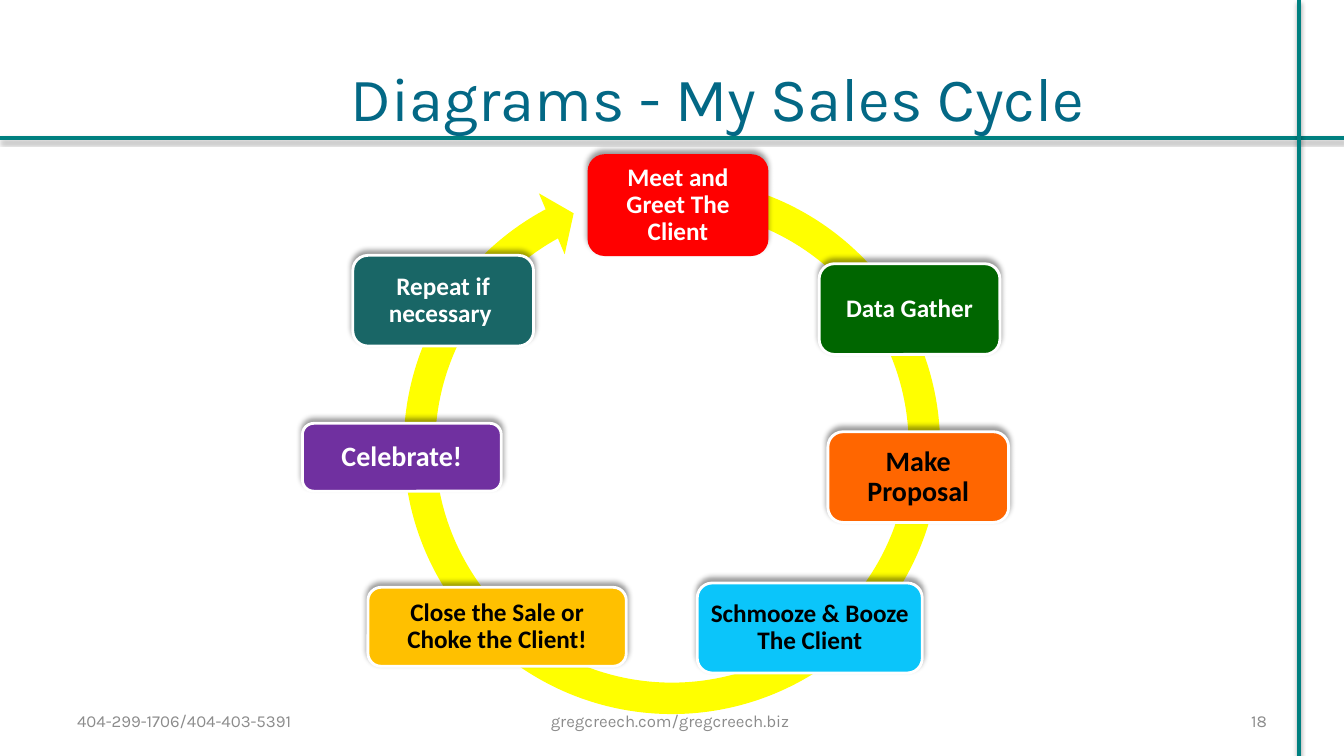
import pptx
import pptx.util
import pptx.dml.color
import pptx.enum.shapes
import pptx.enum.text
import pptx.oxml
import pptx.oxml.ns

RGB = pptx.dml.color.RGBColor
Pt = pptx.util.Pt
SHAPE = pptx.enum.shapes.MSO_SHAPE
ALIGN = pptx.enum.text.PP_ALIGN

WHITE = RGB(0xFF, 0xFF, 0xFF)
BLACK = RGB(0x00, 0x00, 0x00)
TEAL = RGB(0x00, 0x80, 0x80)
TITLE_BLUE = RGB(0x03, 0x68, 0x85)
FOOTER_GREY = RGB(0x8C, 0x8C, 0x8C)
YELLOW = RGB(0xFF, 0xFF, 0x00)
RED = RGB(0xFF, 0x00, 0x00)
GREEN = RGB(0x00, 0x66, 0x00)
ORANGE = RGB(0xFF, 0x66, 0x00)
SKY = RGB(0x0B, 0xC5, 0xFA)
AMBER = RGB(0xFF, 0xC0, 0x00)
PURPLE = RGB(0x70, 0x30, 0xA0)
DARK_TEAL = RGB(0x19, 0x66, 0x66)

# The slide is a grid of 40 columns by 22.5 rows of square cells
WIDTH = pptx.util.Inches(13.33)
HEIGHT = pptx.util.Inches(7.5)
COLS, ROWS = 40, 22.5

# Step text, fill, text colour, size, (column, row, columns wide, rows high)
STEPS = [
    ("Meet and Greet The Client", RED, WHITE, 18, (17.49, 4.59, 5.38, 3.03)),
    ("Data Gather", GREEN, WHITE, 18, (24.38, 7.85, 5.38, 2.7)),
    ("Make Proposal", ORANGE, BLACK, 20, (24.64, 12.85, 5.38, 2.7)),
    ("Schmooze & Booze The Client", SKY, BLACK, 18, (20.75, 17.35, 6.7, 2.68)),
    ("Close the Sale or Choke the Client!", AMBER, BLACK, 18,
     (10.95, 17.48, 7.69, 2.35)),
    ("Celebrate!", PURPLE, WHITE, 20, (9, 12.6, 5.92, 2.02)),
    ("Repeat if necessary ", DARK_TEAL, WHITE, 18, (10.5, 7.6, 5.38, 2.7)),
]

# Footer text, alignment, first column, columns wide
FOOTERS = [
    ("404-299-1706/404-403-5391", ALIGN.LEFT, 2, 9.33),
    ("gregcreech.com/gregcreech.biz ", ALIGN.CENTER, 13.67, 12.67),
    ("18", ALIGN.RIGHT, 28.67, 9.33),
]


def grid(col, row, cols, rows):
    return (round(WIDTH * col / COLS), round(HEIGHT * row / ROWS),
            round(WIDTH * cols / COLS), round(HEIGHT * rows / ROWS))


def add_shadow(sp, blur, distance, degrees, opacity):
    ns = pptx.oxml.ns.nsdecls("a")
    sp._element.spPr.append(pptx.oxml.parse_xml(
        f'<a:effectLst {ns}><a:outerShdw blurRad="{Pt(blur)}" '
        f'dist="{Pt(distance)}" dir="{degrees * 60000}" rotWithShape="0">'
        f'<a:srgbClr val="{BLACK}"><a:alpha val="{opacity * 1000}"/>'
        '</a:srgbClr></a:outerShdw></a:effectLst>'))


def write(sp, text, font, size, color, align, bold=False):
    tf = sp.text_frame
    tf.word_wrap = True
    tf.vertical_anchor = pptx.enum.text.MSO_ANCHOR.MIDDLE
    p = tf.paragraphs[0]
    p.text = text
    p.alignment = align
    p.font.name = font
    p.font.size = Pt(size)
    p.font.bold = bold
    p.font.color.rgb = color
    return tf


def add_rule(s, begin, end):
    x1, y1, x2, y2 = grid(*begin, *end)
    line = s.shapes.add_connector(
        pptx.enum.shapes.MSO_CONNECTOR.STRAIGHT, x1, y1, x2, y2)
    line.line.color.rgb = TEAL
    line.line.width = Pt(3)
    add_shadow(line, 3.1, 1.8, 90, 35)


def add_label(s, text, box, size, color, align):
    sp = s.shapes.add_textbox(*grid(*box))
    write(sp, text, "Karla", size, color, align)


def add_cycle_arrow(s):
    sp = s.shapes.add_shape(SHAPE.CIRCULAR_ARROW, *grid(11.5, 4.77, 17, 17))
    for i, value in enumerate((0.055, 3.307, 144.952, 169.62, 0.058)):
        sp.adjustments[i] = value
    sp.fill.solid()
    sp.fill.fore_color.rgb = YELLOW
    sp.line.fill.background()
    sp.shadow.inherit = False


def add_step(s, text, fill, color, size, box, outlined):
    sp = s.shapes.add_shape(SHAPE.ROUNDED_RECTANGLE, *grid(*box))
    sp.fill.solid()
    sp.fill.fore_color.rgb = fill
    if outlined:
        sp.line.color.rgb = WHITE
        sp.line.width = Pt(2)
    else:
        sp.line.fill.background()
    add_shadow(sp, 4, 3, 270, 40)
    tf = write(sp, text, "Calibri", size, color, ALIGN.CENTER, bold=True)
    tf.paragraphs[0].line_spacing = 0.9
    inset = Pt(size * 0.28)
    tf.margin_left = tf.margin_right = inset
    tf.margin_top = tf.margin_bottom = inset


def main():
    prs = pptx.Presentation()
    prs.slide_width, prs.slide_height = WIDTH, HEIGHT
    s = prs.slides.add_slide(prs.slide_layouts[6])

    # Crossing rules and title
    add_rule(s, (0, 4.11), (COLS, 4.11))
    add_rule(s, (38.67, ROWS), (38.67, 0))
    add_label(s, "Diagrams - My Sales Cycle", (9.25, 1.5, 24.25, 2.75),
              44, TITLE_BLUE, ALIGN.CENTER)

    # Sales cycle: only the first step has no outline
    add_cycle_arrow(s)
    for i, step in enumerate(STEPS):
        add_step(s, *step, outlined=i > 0)

    # Footer
    for text, align, col, cols in FOOTERS:
        add_label(s, text, (col, 20.85, cols, 1.2), 12, FOOTER_GREY, align)

    prs.save("out.pptx")


if __name__ == "__main__":
    main()
